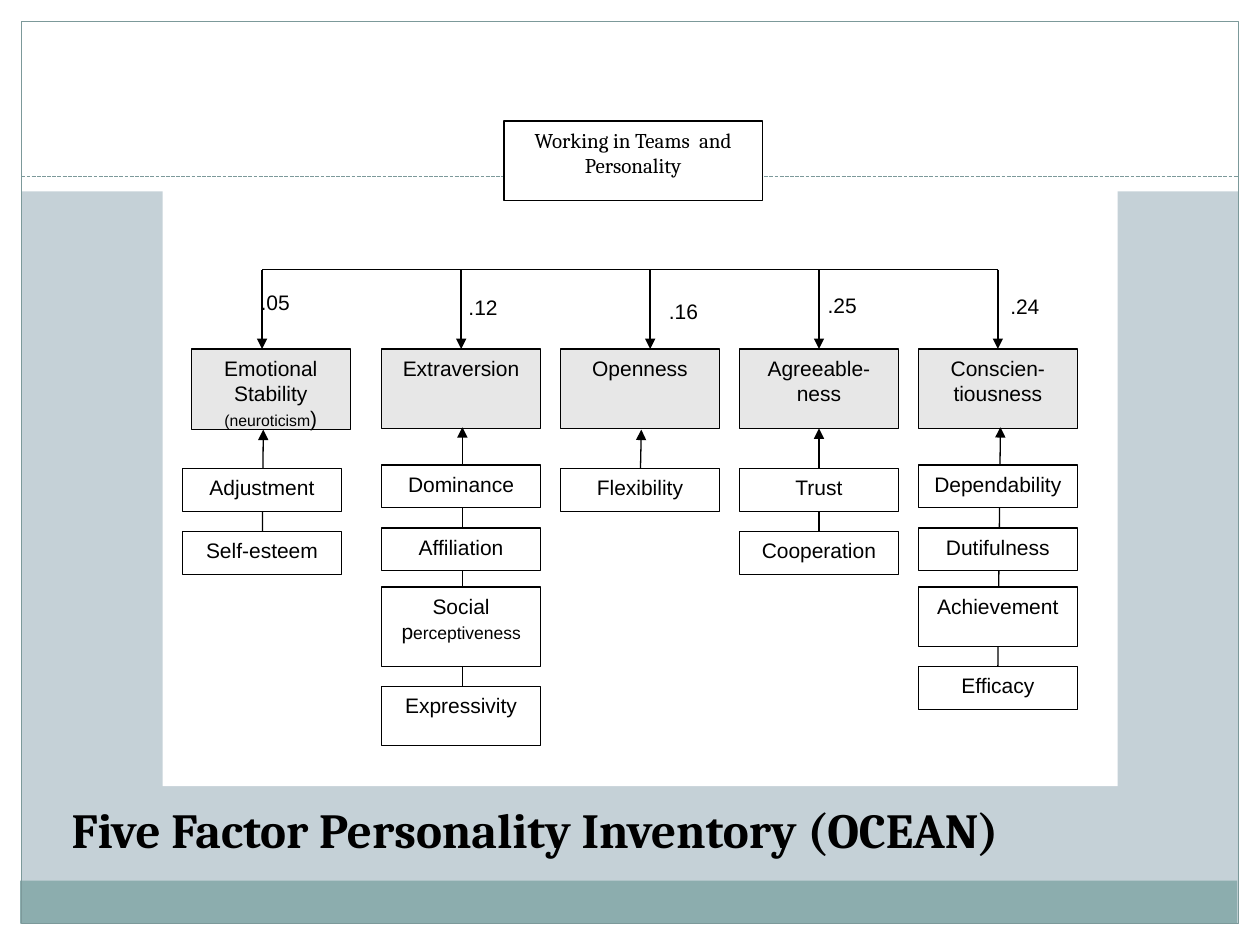
from dataclasses import dataclass

from lxml import etree
from pptx import Presentation
from pptx.dml.color import RGBColor
from pptx.enum.dml import MSO_LINE
from pptx.enum.shapes import MSO_CONNECTOR, MSO_SHAPE
from pptx.enum.text import MSO_ANCHOR, PP_ALIGN
from pptx.oxml.ns import qn
from pptx.util import Inches, Pt

BLACK, WHITE, TEAL, EDGE = "000000", "FFFFFF", "8CADAE", "7C999A"
BACKGROUND, FACTOR_GREY = "C5D1D7", "C0C0C0"
BOX_WIDTH, LOW_BOX, TALL_BOX = 1.26, 0.34, 0.47
FACTOR_TOP, FACTOR_HEIGHT, BRANCH_TOP = 2.77, 0.63, 2.14


@dataclass
class Factor:
    """One personality factor with its weight and its column of facets."""

    paragraphs: list
    left: float
    arrow_x: float
    weight: str
    weight_at: tuple
    stem: tuple
    facet_left: float
    facets: list
    height: float = FACTOR_HEIGHT


FACTORS = [
    Factor([[("Emotional", 12)], [("Stability", 12)], [("(neuroticism", 9), (")", 12)]],
           1.52, 2.08, ".05", (1.97, 2.25), (2.08, 4.51, 2.09, 3.41), 1.45,
           [("Adjustment", 3.72, LOW_BOX), ("Self-esteem", 4.22, LOW_BOX)], 0.64),
    Factor([[("Extraversion", 12)]],
           3.03, 3.66, ".12", (3.62, 2.29), (3.67, 5.6, 3.67, 3.39), 3.03,
           [("Dominance", 3.69, LOW_BOX), ("Affiliation", 4.19, LOW_BOX),
            ("Social p|erceptiveness", 4.66, FACTOR_HEIGHT),
            ("Expressivity", 5.45, TALL_BOX)]),
    Factor([[("Openness", 12)]],
           4.45, 5.16, ".16", (5.21, 2.32), (5.08, 3.87, 5.09, 3.41), 4.45,
           [("Flexibility", 3.72, LOW_BOX)]),
    Factor([[("Agreeable-ness", 12)]],
           5.87, 6.5, ".25", (6.47, 2.27), (6.5, 4.51, 6.5, 3.4), 5.87,
           [("Trust", 3.72, LOW_BOX), ("Cooperation", 4.22, LOW_BOX)]),
    Factor([[("Conscien-tiousness", 12)]],
           7.29, 7.92, ".24", (7.92, 2.28), (7.92, 5.29, 7.94, 3.39), 7.29,
           [("Dependability", 3.69, LOW_BOX), ("Dutifulness", 4.19, LOW_BOX),
            ("Achievement", 4.66, TALL_BOX), ("Efficacy", 5.29, LOW_BOX)]),
]


def color(value):
    """Turn a hex string into a colour."""
    return RGBColor.from_string(value)


def write_text(shape, paragraphs, font="Arial", bold=False, align=PP_ALIGN.CENTER,
               side_inset=0.1, wrap=True):
    """Write paragraphs, each a list of (text, size) runs."""
    frame = shape.text_frame
    layout = {
        "word_wrap": wrap, "vertical_anchor": MSO_ANCHOR.TOP,
        "margin_left": Inches(side_inset), "margin_right": Inches(side_inset),
        "margin_top": Inches(0.05), "margin_bottom": Inches(0.05),
    }
    for name, value in layout.items():
        setattr(frame, name, value)
    for index, runs in enumerate(paragraphs):
        paragraph = frame.add_paragraph() if index else frame.paragraphs[0]
        paragraph.alignment = align
        for text, size in runs:
            run = paragraph.add_run()
            run.text = text
            for name, value in {"name": font, "size": Pt(size), "bold": bold}.items():
                setattr(run.font, name, value)
            run.font.color.rgb = color(BLACK)


def add_box(slide, left, top, width, height, fill=WHITE, line=None, opacity=None):
    """Add a rectangle with optional fill, outline and opacity in percent."""
    shape = slide.shapes.add_shape(MSO_SHAPE.RECTANGLE, *map(Inches, (left, top, width, height)))
    shape.shadow.inherit = False
    if fill:
        shape.fill.solid()
        shape.fill.fore_color.rgb = color(fill)
    else:
        shape.fill.background()
    if opacity:
        hue = shape.fill._xPr.find(".//" + qn("a:srgbClr"))
        etree.SubElement(hue, qn("a:alpha"), val=str(opacity * 1000))
    if line:
        shape.line.color.rgb = color(line)
        shape.line.width = Pt(0.75)
    else:
        shape.line.fill.background()
    return shape


def add_line(slide, x1, y1, x2, y2, line=BLACK, arrow=False, dash=None):
    """Add a straight line, with an arrowhead at its end if asked."""
    connector = slide.shapes.add_connector(
        MSO_CONNECTOR.STRAIGHT, *map(Inches, (x1, y1, x2, y2)))
    connector.line.color.rgb = color(line)
    connector.line.width = Pt(0.75)
    if dash:
        connector.line.dash_style = dash
    if arrow:
        etree.SubElement(connector.line._get_or_add_ln(), qn("a:tailEnd"), type="triangle")
    etree.SubElement(connector._element.spPr, qn("a:effectLst"))


def add_label(slide, left, top, width, height, text, size, **text_format):
    """Add a left-aligned text box."""
    label = slide.shapes.add_textbox(*map(Inches, (left, top, width, height)))
    write_text(label, [[(text, size)]], align=PP_ALIGN.LEFT, **text_format)


def add_frame(slide):
    """Add the white margins, bottom band, outline and dashed rule."""
    slide.background.fill.solid()
    slide.background.fill.fore_color.rgb = color(BACKGROUND)
    for area in [(0, 7.33, 10, 0.17), (0, 0, 10, 1.52), (0, 0, 0.17, 7.5), (9.83, 0, 0.17, 7.5)]:
        add_box(slide, *area)
    add_box(slide, 0.16, 6.99, 9.66, 0.34, TEAL)
    add_box(slide, 0.17, 0.17, 9.66, 7.16, None, EDGE)
    add_line(slide, 0.17, 1.4, 9.83, 1.4, EDGE, dash=MSO_LINE.SQUARE_DOT)


def add_factor(slide, factor):
    """Add a factor with its weight, arrows and facets."""
    add_line(slide, *factor.stem, arrow=True)
    add_label(slide, *factor.weight_at, 0.63, 0.47, factor.weight, 12)
    box = add_box(slide, factor.left, FACTOR_TOP, BOX_WIDTH, factor.height,
                  FACTOR_GREY, BLACK, opacity=37)
    write_text(box, factor.paragraphs)
    add_line(slide, factor.arrow_x, BRANCH_TOP, factor.arrow_x, FACTOR_TOP, arrow=True)
    for text, top, height in factor.facets:
        facet = add_box(slide, factor.facet_left, top, BOX_WIDTH, height, line=BLACK)
        runs = list(zip(text.split("|"), (12, 10)))
        write_text(facet, [runs], side_inset=0)


def main():
    """Build and save the slide."""
    presentation = Presentation()
    presentation.slide_width, presentation.slide_height = Inches(10), Inches(7.5)
    slide = presentation.slides.add_slide(presentation.slide_layouts[6])
    add_frame(slide)
    add_box(slide, 1.29, 1.5, 7.58, 4.74)
    add_line(slide, FACTORS[0].arrow_x, BRANCH_TOP, FACTORS[-1].arrow_x, BRANCH_TOP)
    for factor in FACTORS:
        add_factor(slide, factor)
    add_label(slide, 0.47, 6.3, 8.93, 0.57, "Five Factor Personality Inventory (OCEAN)", 28,
              font="Cambria", bold=True)
    topic = add_box(slide, 4, 0.96, 2.05, 0.63, line=BLACK)
    write_text(topic, [[("Working in Teams  and Personality", 12)]], font="Cambria")
    presentation.save("out.pptx")


if __name__ == "__main__":
    main()
